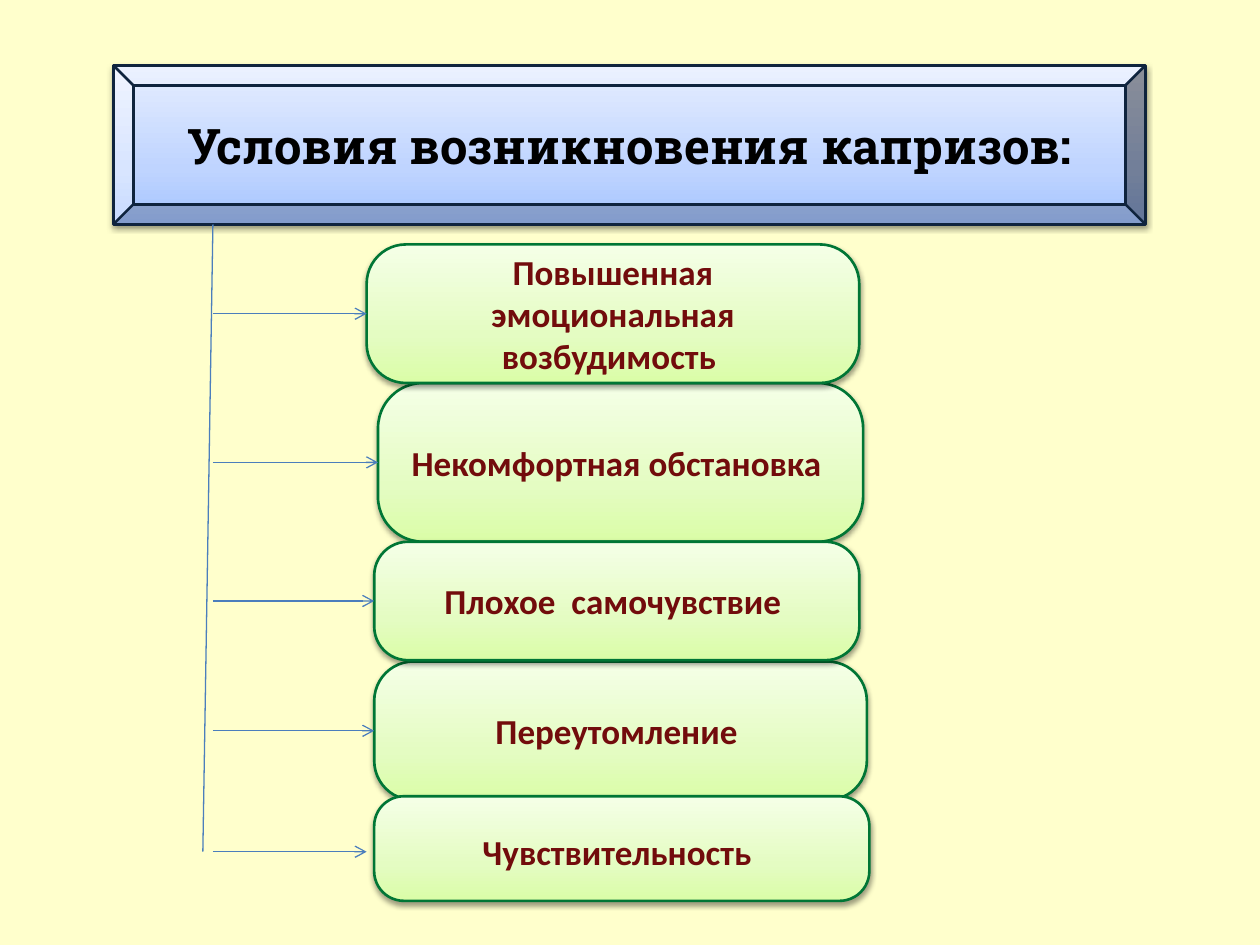
from lxml.etree import SubElement
from pptx import Presentation
from pptx.dml.color import RGBColor
from pptx.enum.shapes import MSO_CONNECTOR, MSO_SHAPE
from pptx.enum.text import MSO_ANCHOR, MSO_AUTO_SIZE, PP_ALIGN
from pptx.oxml.ns import qn
from pptx.util import Inches, Pt

# The slide is a grid of 100 columns by 75 rows
WIDTH, HEIGHT = Inches(10), Inches(7.5)
COLUMN, ROW = WIDTH / 100, HEIGHT / 75

COLORS = {
    "page": "FFFFCC",
    "banner_line": "0F243E",
    "title": "000000",
    "card_line": "007635",
    "card_text": "720C0C",
    "arrow": "4B7EBC",
    "shadow": "000000",
}
GRADIENTS = {
    "banner": [(0, "A4C4FF"), (35, "BFD4FF"), (100, "E6EEFF")],
    "card": [(0, "DAFDA7"), (35, "E4FCC2"), (100, "F5FFE7")],
}
TITLE_FONT = {"name": "Roboto Slab", "size": Pt(28), "bold": True}
CARD_FONT = {"name": "Calibri", "size": Pt(20), "bold": True}

BANNER_BOX = (9, 5.2, 81.9, 12.6)
TRUNK_COLUMN = 16.9
# Conditions from back to front: text, size of its closing space, box
CONDITIONS = [
    ("Переутомление", 20, (29.7, 52.5, 39.1, 11)),
    ("Некомфортная обстановка", 20, (30, 30.4, 38.5, 12.6)),
    ("Плохое  самочувствие", 20, (29.7, 43, 38.5, 9.4)),
    ("Повышенная эмоциональная возбудимость", 20, (29.1, 19.4, 39.1, 11)),
    ("Чувствительность", 24, (29.7, 63.2, 39.3, 8.3)),
]
LAST_ARROW = (29.1, 67.6)


def color(key):
    return RGBColor.from_string(COLORS[key])


def place(box):
    left, top, width, height = box
    return [round(n) for n in (left * COLUMN, top * ROW, width * COLUMN, height * ROW)]


def point(column, row):
    return round(column * COLUMN), round(row * ROW)


def add_span(para, text, font, color_key):
    span = para.add_run()
    span.text = text
    for name, value in font.items():
        setattr(span.font, name, value)
    span.font.color.rgb = color(color_key)


def center_text(frame):
    frame.word_wrap = True
    frame.vertical_anchor = MSO_ANCHOR.MIDDLE
    para = frame.paragraphs[0]
    para.alignment = PP_ALIGN.CENTER
    return para


def add_panel(page, kind, box, gradient, line):
    """Shape with a vertical three-stop gradient and a soft shadow."""
    shape = page.shapes.add_shape(kind, *place(box))
    shape.fill.gradient()
    shape.fill.gradient_angle = 90
    stops = next(shape.element.spPr.iter(qn("a:gsLst")))
    for stop in list(stops):
        stops.remove(stop)
    for position, value in GRADIENTS[gradient]:
        stop = SubElement(stops, qn("a:gs"), pos=str(position * 1000))
        SubElement(stop, qn("a:srgbClr"), val=value)

    shape.line.color.rgb = color(line)
    shape.line.width = Pt(1.5)

    shape.shadow.inherit = False
    effects = shape.element.spPr.find(qn("a:effectLst"))
    shadow = SubElement(effects, qn("a:outerShdw"), blurRad=str(Pt(3.1)),
                        dist=str(Pt(1.6)), dir="5400000", rotWithShape="0")
    tint = SubElement(shadow, qn("a:srgbClr"), val=COLORS["shadow"])
    SubElement(tint, qn("a:alpha"), val="38000")
    return shape


def add_line(page, start, end, arrow=True):
    line = page.shapes.add_connector(MSO_CONNECTOR.STRAIGHT, *point(*start), *point(*end))
    line.line.color.rgb = color("arrow")
    line.line.width = Pt(0.75)
    if arrow:
        SubElement(line.line._get_or_add_ln(), qn("a:tailEnd"), type="arrow")
    SubElement(line.element.spPr, qn("a:effectLst"))
    return line


def add_banner(page, box):
    add_panel(page, MSO_SHAPE.BEVEL, box, "banner", "banner_line")
    title = page.shapes.title
    title.left, title.top, title.width, title.height = place(box)
    # Keep the title in front of its bevelled panel
    page.shapes.element.append(title.element)
    title.text_frame.auto_size = MSO_AUTO_SIZE.NONE
    para = center_text(title.text_frame)
    add_span(para, "Условия возникновения капризов:", TITLE_FONT, "title")


def add_card(page, box, text, space_size):
    card = add_panel(page, MSO_SHAPE.ROUNDED_RECTANGLE, box, "card", "card_line")
    card.adjustments[0] = 0.284
    para = center_text(card.text_frame)
    add_span(para, text, CARD_FONT, "card_text")
    add_span(para, " ", {**CARD_FONT, "size": Pt(space_size)}, "card_text")
    return card


def add_branches(page, cards):
    # Trunk falling from the banner
    add_line(page, (TRUNK_COLUMN, 17.8), (16.1, LAST_ARROW[1]), arrow=False)
    # Arrows that meet the left side of each card
    for card, (_, _, (left, top, _, height)) in zip(cards[:-1], CONDITIONS):
        middle = top + height / 2
        arrow = add_line(page, (TRUNK_COLUMN, middle), (left, middle))
        arrow.end_connect(card, 1)
    # The lowest arrow stops just short of its card
    add_line(page, (TRUNK_COLUMN, LAST_ARROW[1]), LAST_ARROW)


def main():
    deck = Presentation()
    deck.slide_width, deck.slide_height = WIDTH, HEIGHT
    page = deck.slides.add_slide(deck.slide_layouts[5])
    page.background.fill.solid()
    page.background.fill.fore_color.rgb = color("page")

    add_banner(page, BANNER_BOX)
    cards = [add_card(page, box, text, size) for text, size, box in CONDITIONS]
    add_branches(page, cards)
    deck.save("out.pptx")


if __name__ == "__main__":
    main()
